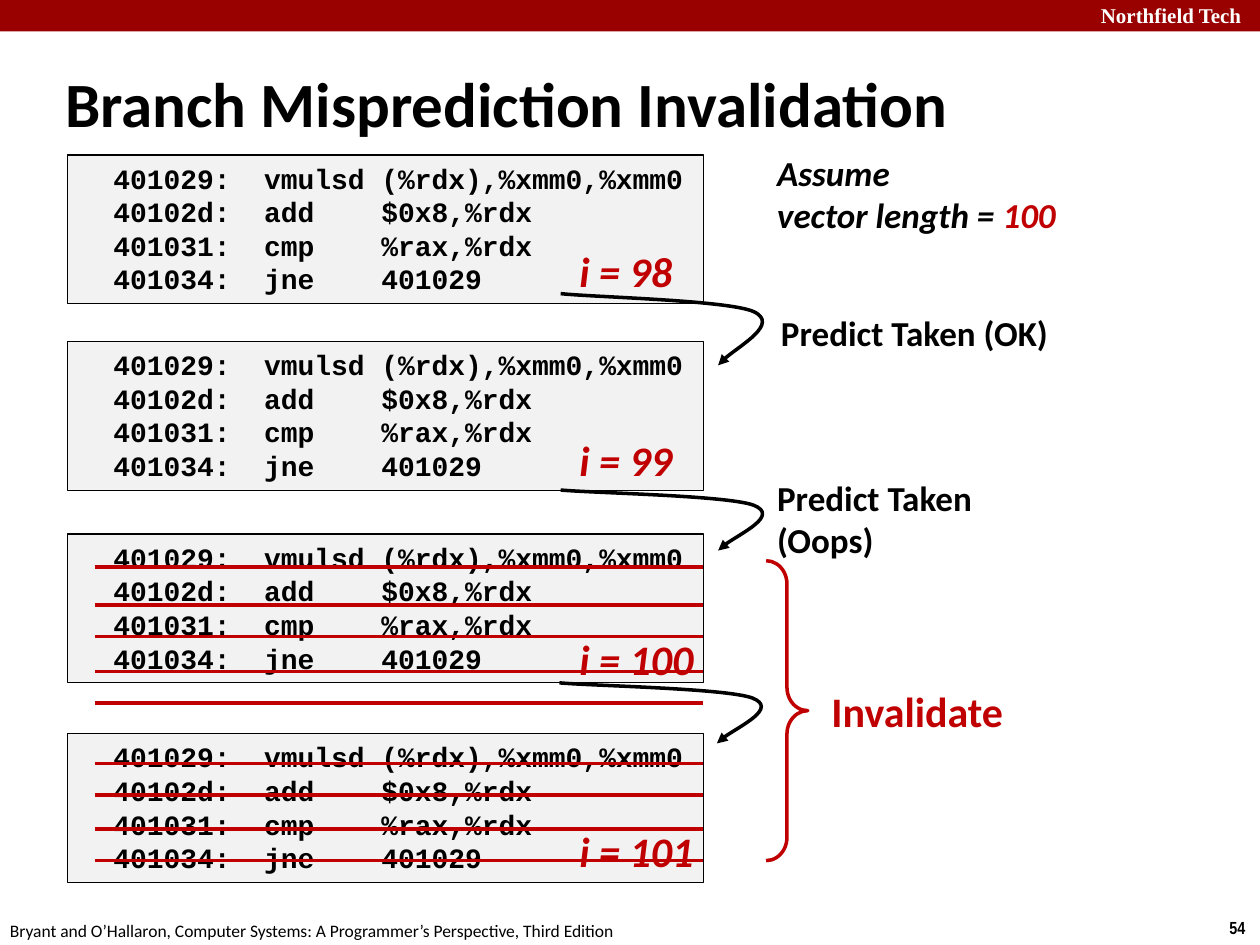
"""Build the slide on branch misprediction invalidation."""
from lxml import etree
from pptx import Presentation
from pptx.dml.color import RGBColor
from pptx.enum.shapes import MSO_CONNECTOR as Connector, MSO_SHAPE as Shape
from pptx.enum.text import MSO_ANCHOR as Anchor, MSO_AUTO_SIZE as AutoSize, PP_ALIGN as Align
from pptx.oxml.ns import qn
from pptx.util import Pt

BLACK, RED = "000000", "C00000"
color = RGBColor.from_string


def write(shape, lines, size, font="Calibri", ink=BLACK, bold=True, italic=False):
    frame = shape.text_frame
    frame.word_wrap = False
    frame.vertical_anchor = Anchor.TOP
    frame.text = "\n".join(lines)
    for para in frame.paragraphs:
        para.alignment = Align.LEFT
        para.font.name, para.font.size = font, Pt(size)
        para.font.bold, para.font.italic = bold, italic
        para.font.color.rgb = color(ink)
    return frame


def outline(line, ink, width):
    line.color.rgb = color(ink)
    line.width = Pt(width)


deck = Presentation()
deck.slide_width, deck.slide_height = Pt(720), Pt(540)
slide = deck.slides.add_slide(deck.slide_layouts[5])
shapes = slide.shapes

banner = shapes.add_shape(Shape.RECTANGLE, 0, 0, Pt(720), Pt(18))
banner.shadow.inherit = False
banner.fill.solid()
banner.fill.fore_color.rgb = color("990000")
banner.line.fill.background()

title = shapes.title
title.left, title.top, title.width, title.height = Pt(30.2), Pt(36), Pt(625.7), Pt(45.4)
frame = write(title, ["Branch Misprediction Invalidation"], 36)
frame.word_wrap = True
frame.auto_size = AutoSize.NONE
frame.vertical_anchor = Anchor.MIDDLE
indent = frame.paragraphs[0].font._element.getparent()
indent.set("marL", str(Pt(9.4)))
indent.set("indent", str(Pt(-9.4)))

code = [
    "  401029:  vmulsd (%rdx),%xmm0,%xmm0",
    "  40102d:  add    $0x8,%rdx",
    "  401031:  cmp    %rax,%rdx",
    "  401034:  jne    401029",
]
for top in (88.5, 195.2, 305.2, 419.3):
    block = shapes.add_shape(Shape.RECTANGLE, Pt(38.6), Pt(top), Pt(363.6), Pt(85))
    block.shadow.inherit = False
    block.fill.solid()
    block.fill.fore_color.rgb = color("F2F2F2")
    outline(block.line, BLACK, 0.75)
    write(block, code, 16, "Courier New")

curve = [(0, 0), (18.7, 0.05), (95, 0.09), (110.2, 0.25), (125.3, 0.42), (94.3, 0.84), (90, 1)]
for left, top, height in ((320.4, 167.8, 41), (320.4, 280, 34.6), (319.7, 390.2, 34.6)):
    points = [(Pt(left + x), Pt(top + height * y)) for x, y in curve]
    builder = shapes.build_freeform(*points[0])
    builder.add_line_segments(points[1:], close=False)
    arrow = builder.convert_to_shape()
    arrow.shadow.inherit = False
    arrow.fill.background()
    outline(arrow.line, BLACK, 2)
    stroke = arrow._element.spPr.find(qn("a:ln"))
    etree.SubElement(stroke, qn("a:tailEnd"), type="triangle")
    segments = list(arrow._element.iter(qn("a:lnTo")))
    for start in range(0, len(segments), 3):
        bezier = etree.Element(qn("a:cubicBezTo"))
        segments[start].addprevious(bezier)
        for segment in segments[start:start + 3]:
            bezier.append(segment[0])
            segment.getparent().remove(segment)

labels = [
    (622, -2.2, 103, 21.6, ["Northfield Tech"], 12, "Times New Roman", "FFFFFF", True, False),
    (695.5, 520.6, 24.5, 19.4, ["54"], 10, "Arial Narrow", BLACK, True, False),
    (-1.4, 522, 365.8, 19.4,
     ["Bryant and O’Hallaron, Computer Systems: A Programmer’s Perspective, Third Edition"],
     10, "Calibri", BLACK, False, False),
    (324, 136.8, 67.7, 36, ["i = 98"], 24, "Calibri", RED, True, True),
    (324, 244.8, 67.7, 36, ["i = 99"], 24, "Calibri", RED, True, True),
    (324, 358.6, 80, 36, ["i = 100"], 24, "Calibri", RED, True, True),
    (324, 468, 80, 36, ["i = 101"], 24, "Calibri", RED, True, True),
    (439.2, 174.2, 168.5, 31.7, ["Predict Taken (OK)"], 20, "Calibri", BLACK, True, False),
    (437, 268.6, 126.7, 55.4, ["Predict Taken", "(Oops)"], 20, "Calibri", BLACK, True, False),
    (468, 388, 113.8, 36, ["Invalidate"], 24, "Calibri", RED, True, False),
]
for left, top, width, height, *style in labels:
    label = shapes.add_textbox(Pt(left), Pt(top), Pt(width), Pt(height))
    write(label, *style)

assumption = shapes.add_textbox(Pt(437), Pt(82.8), Pt(175), Pt(55.4))
frame = write(assumption, ["Assume", "vector length = "], 20, italic=True)
span = frame.paragraphs[1].add_run()
span.text = "100"
span.font.color.rgb = color(RED)

for y in (324, 345.6, 363.6, 383.8, 401.8, 436.3, 454.3, 473.8, 491.8):
    strike = shapes.add_connector(Connector.STRAIGHT, Pt(54), Pt(y), Pt(401.8), Pt(y))
    outline(strike.line, RED, 2)
    etree.SubElement(strike._element.spPr, qn("a:effectLst"))

brace = shapes.add_shape(Shape.RIGHT_BRACE, Pt(437.8), Pt(320.4), Pt(23.8), Pt(171.4))
brace.shadow.inherit = False
brace.fill.background()
brace.adjustments[0], brace.adjustments[1] = 0.56, 0.5
outline(brace.line, RED, 2)

deck.save("out.pptx")
